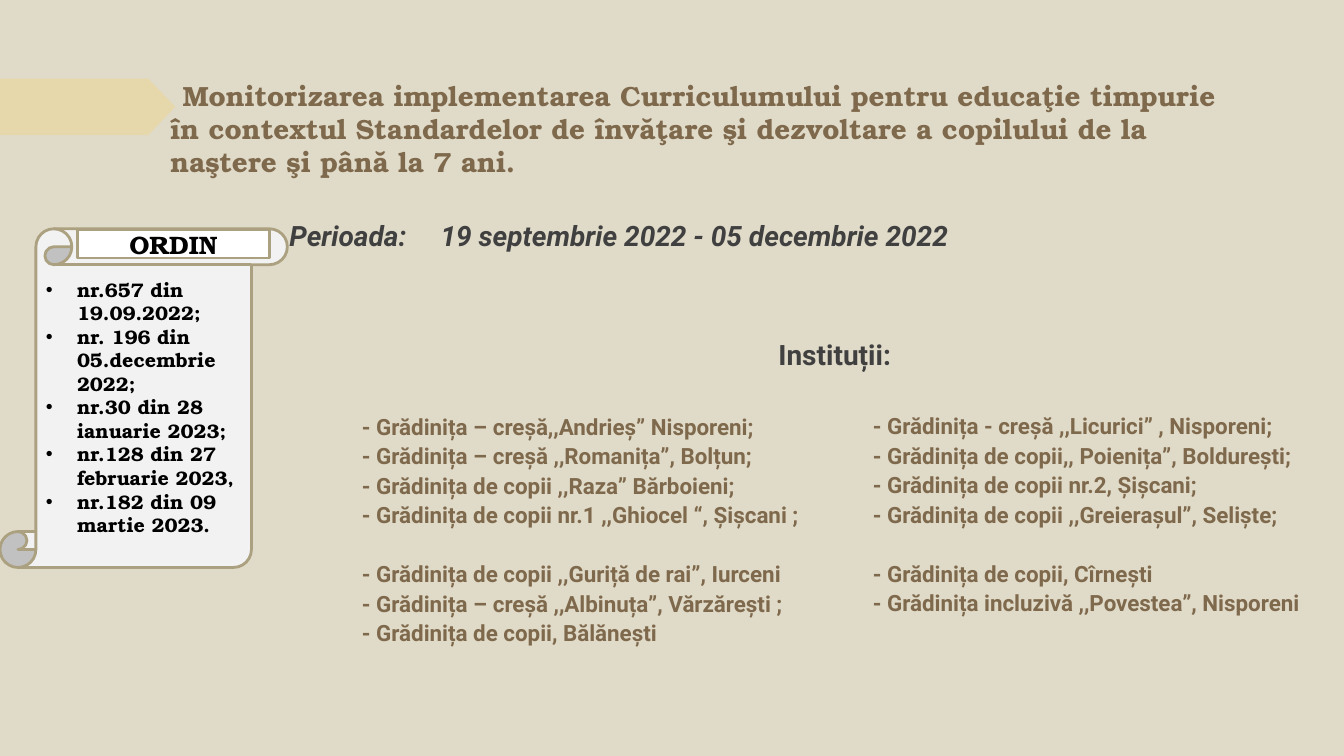
"""Build the slide on monitoring the early education curriculum."""
from lxml.etree import SubElement
from pptx import Presentation
from pptx.dml.color import RGBColor
from pptx.enum.shapes import MSO_SHAPE
from pptx.enum.text import MSO_ANCHOR, MSO_AUTO_SIZE, PP_ALIGN
from pptx.oxml.ns import qn
from pptx.util import Inches, Pt

WIDE, HIGH = Inches(13.33), Inches(7.5)
HUES = {"back": "E0DAC8", "arrow": "E7D8AC", "brown": "7F694C", "gray": "404040",
        "black": "000000", "white": "FFFFFF", "scroll": "F2F2F2", "edge": "ABA07F"}
SERIF, SANS = "TeX Gyre Bonum", "Roboto"
TITLE = ("Monitorizarea implementarea Curriculumului pentru educaţie timpurie în contextul "
         "Standardelor de învăţare şi dezvoltare a copilului de la naştere şi până la 7 ani.")
ORDERS = ["nr.657 din 19.09.2022;", "nr. 196 din 05.decembrie 2022;", "nr.30 din 28 ianuarie 2023;",
          "nr.128 din 27 februarie 2023,", "nr.182 din 09 martie 2023."]
LEFT = ["- Grădinița – creșă,,Andrieș” Nisporeni;", "- Grădinița – creșă ,,Romanița”, Bolțun;",
        "- Grădinița de copii ,,Raza” Bărboieni;", "- Grădinița de copii nr.1 ,,Ghiocel “, Șișcani ;",
        "- Grădinița de copii ,,Guriță de rai”, Iurceni", "- Grădinița – creșă ,,Albinuța”, Vărzărești ;",
        "- Grădinița de copii, Bălănești"]
RIGHT = ["- Grădinița - creșă ,,Licurici” , Nisporeni;", "- Grădinița de copii,, Poienița”, Boldurești;",
         "- Grădinița de copii nr.2, Șișcani;", "- Grădinița de copii ,,Greierașul”, Seliște;",
         "- Grădinița de copii, Cîrnești", "- Grădinița incluzivă ,,Povestea”, Nisporeni"]


def hue(name):
    """Return a named colour."""
    return RGBColor.from_string(HUES[name])


def area(x, y, wide, high):
    """Turn percentages of the slide into a place and size."""
    return [int(WIDE * x / 100), int(HIGH * y / 100), int(WIDE * wide / 100), int(HIGH * high / 100)]


def paint(shape, fill, edge=None):
    """Fill and outline a shape."""
    shape.shadow.inherit = False
    shape.fill.solid()
    shape.fill.fore_color.rgb = hue(fill)
    if edge:
        shape.line.color.rgb = hue(edge)
        shape.line.width = Pt(2)
    else:
        shape.line.fill.background()


def write(para, text, size, face, color, indent=(0, 0), bullet=None):
    """Write one bold paragraph with its indent and bullet."""
    para.text = text
    props = para._p.get_or_add_pPr()
    props.set("marL", str(Inches(indent[0])))
    props.set("indent", str(Inches(indent[1])))
    if bullet:
        SubElement(props, qn("a:buFont"), typeface="Arial")
        SubElement(props, qn("a:buChar"), char=bullet)
    else:
        SubElement(props, qn("a:buNone"))
    font = para.font
    font.size, font.name, font.bold = Pt(size), face, True
    font.color.rgb = hue(color)
    para.alignment = PP_ALIGN.LEFT
    para.space_before = Pt(0)


def place(holder, spot, left, top, right):
    """Move a placeholder and set its insets."""
    holder.left, holder.top, holder.width, holder.height = spot
    frame = holder.text_frame
    frame.word_wrap, frame.auto_size = True, MSO_AUTO_SIZE.NONE
    frame.vertical_anchor = MSO_ANCHOR.TOP
    frame.margin_left, frame.margin_top = Inches(left), Inches(top)
    frame.margin_right, frame.margin_bottom = Inches(right), Inches(0.1)
    return frame


def arrow(slide):
    """Draw the pointed band behind the title."""
    tips = [(11.03, 10.4), (13.05, 14.13), (11.03, 17.87), (0, 17.87)]
    form = slide.shapes.build_freeform(*area(0, 10.4, 0, 0)[:2])
    form.add_line_segments([area(x, y, 0, 0)[:2] for x, y in tips])
    band = form.convert_to_shape()
    paint(band, "arrow")
    slide.shapes._spTree.insert(2, band._element)


def panel(slide, kind, spot, fill):
    """Add an outlined shape and return its text frame."""
    shape = slide.shapes.add_shape(kind, *spot)
    paint(shape, fill, "edge")
    shape.text_frame.word_wrap = True
    shape.text_frame.vertical_anchor = MSO_ANCHOR.MIDDLE
    return shape.text_frame


def head(frame):
    """Write the period and the heading of the institutions."""
    para = frame.paragraphs[0]
    write(para, "Perioada:\t19 septembrie 2022 - 05 decembrie 2022", 20, SANS, "gray")
    para.font.italic, para.line_spacing = True, 1.2
    para = frame.add_paragraph()
    write(para, "Instituții:", 20, SANS, "gray", (4.85, 0))
    para.space_before, para.line_spacing = Pt(57.5), 1.15


def column(frame, names, left, gap):
    """Write one column of institutions, in two groups."""
    gaps = {0: gap, 4: 21}
    for row, name in enumerate(names):
        para = frame.add_paragraph() if row or gap else frame.paragraphs[0]
        write(para, name, 16, SANS, "brown", (left, 0))
        para.space_before, para.line_spacing = Pt(gaps.get(row, 0)), 1.1


def main():
    """Build and save the slide."""
    deck = Presentation()
    deck.slide_width, deck.slide_height = WIDE, HIGH
    slide = deck.slides.add_slide(deck.slide_layouts[3])
    slide.background.fill.solid()
    slide.background.fill.fore_color.rgb = hue("back")
    arrow(slide)
    title, text, side = slide.placeholders
    frame = place(title, area(11.93, 9.07, 82.45, 18.67), 0.1, 0.1, 0.2)
    write(frame.paragraphs[0], TITLE, 19.8, SERIF, "brown", (0, 0.12))
    frame = place(text, area(19.88, 22.4, 78.62, 74.67), 0.22, 0.42, 0.1)
    head(frame)
    column(frame, LEFT, 0.72, 28)
    column(place(side, area(64.2, 52.87, 34.3, 32), 0.1, 0.1, 0.1), RIGHT, 0, 0)
    frame = panel(slide, MSO_SHAPE.VERTICAL_SCROLL, area(0, 30.27, 21.38, 44.8), "scroll")
    for row, order in enumerate(ORDERS):
        para = frame.add_paragraph() if row else frame.paragraphs[0]
        write(para, order, 14, SERIF, "black", (0.31, -0.31), "•")
    frame = panel(slide, MSO_SHAPE.RECTANGLE, area(5.78, 30.4, 14.25, 3.73), "white")
    write(frame.paragraphs[0], "ORDIN", 18, SERIF, "black")
    frame.paragraphs[0].alignment = PP_ALIGN.CENTER
    deck.save("out.pptx")


if __name__ == "__main__":
    main()
